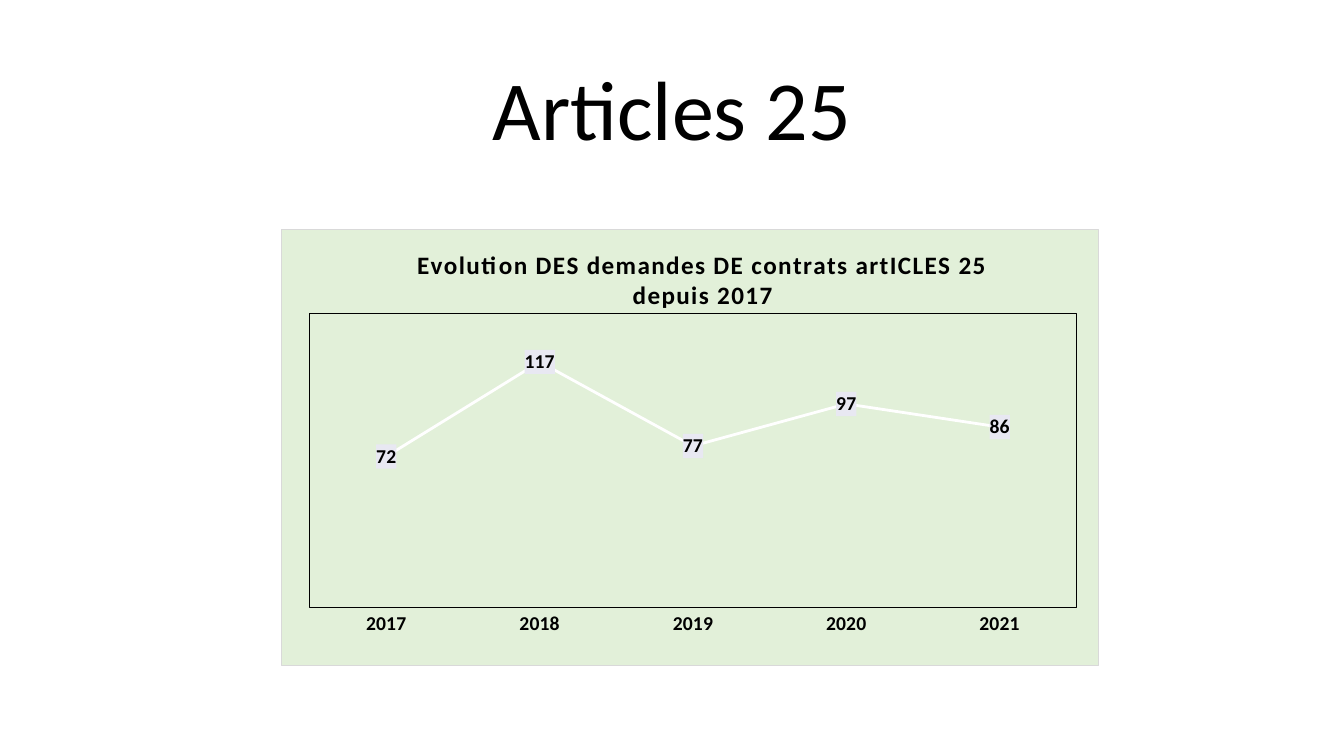
"""Build a slide with a line chart of contract requests by year."""
from lxml import etree
from pptx import Presentation
from pptx.chart.data import CategoryChartData
from pptx.dml.color import RGBColor
from pptx.enum.chart import XL_CHART_TYPE, XL_LABEL_POSITION, XL_MARKER_STYLE, XL_TICK_MARK
from pptx.enum.text import MSO_ANCHOR, PP_ALIGN
from pptx.oxml import parse_xml
from pptx.util import Pt

LINE = XL_CHART_TYPE.LINE
MID = XL_LABEL_POSITION.CENTER
NO_MARK = XL_MARKER_STYLE.NONE
NO_TICK = XL_TICK_MARK.NONE
ANCHOR = MSO_ANCHOR.MIDDLE
CENTER = PP_ALIGN.CENTER

TITLE = "Articles 25"
HEAD = "Evolution DES demandes DE contrats artICLES 25 depuis 2017"
DATA = {"2017": 72, "2018": 117, "2019": 77, "2020": 97, "2021": 86}
SIZE = (960, 540)
TITLE_BOX = (66, 28.75, 828, 104.4)
CHART_BOX = (201, 163.5, 584, 312.5)
PLOT = {"x": 0.034, "y": 0.193, "w": 0.939, "h": 0.674}
HEAD_AT = {"x": 0.16, "y": 0.03}
GREEN, GREY, BLACK, WHITE, LILAC = "E2F0D9", "D9D9D9", "000000", "FFFFFF", "E8E8F2"
FONT = {"name": "Calibri", "bold": True}
NS = ('xmlns:c="http://schemas.openxmlformats.org/drawingml/2006/chart" '
      'xmlns:a="http://schemas.openxmlformats.org/drawingml/2006/main"')
C = "{http://schemas.openxmlformats.org/drawingml/2006/chart}"


def color(code):
    return RGBColor.from_string(code)


def style(font, size, **more):
    for key, val in {**FONT, "size": Pt(size), **more}.items():
        setattr(font, key, val)
    font.color.rgb = color(BLACK)


def place(shape, box):
    for key, val in zip(("left", "top", "width", "height"), box):
        setattr(shape, key, Pt(val))


def fill(code, edge=None):
    paint = '<a:solidFill><a:srgbClr val="{}"/></a:solidFill>'
    line = f'<a:ln w="{Pt(0.75)}">{paint.format(edge)}</a:ln>' if edge else ""
    return parse_xml(f"<c:spPr {NS}>{paint.format(code)}{line}</c:spPr>")


def layout(node, spots, index, inner=False):
    for old in node.findall(C + "layout"):
        node.remove(old)
    new = parse_xml(f"<c:layout {NS}><c:manualLayout/></c:layout>")
    tags = [("layoutTarget", "inner")] if inner else []
    tags += [(key + "Mode", "edge") for key in "xy"]
    tags += list(spots.items())
    for tag, val in tags:
        etree.SubElement(new[0], C + tag, val=str(val))
    node.insert(index, new)


def add_title(slide):
    title = slide.shapes.title
    place(title, TITLE_BOX)
    frame = title.text_frame
    frame.text = TITLE
    frame.vertical_anchor = ANCHOR
    para = frame.paragraphs[0]
    para.alignment = CENTER
    para.line_spacing = 0.9
    style(para.runs[0].font, 60, bold=False)


def add_chart(slide):
    data = CategoryChartData()
    data.categories = list(DATA)
    data.add_series("Series 1", list(DATA.values()))
    chart = slide.shapes.add_chart(LINE, *map(Pt, CHART_BOX), data).chart
    style(chart.font, 10, bold=False)
    chart.has_legend = False

    chart.has_title = True
    head = chart.chart_title
    head.text_frame.text = HEAD
    run = head.text_frame.paragraphs[0].runs[0]
    style(run.font, 18)
    run.font._element.set("spc", "100")
    layout(head._element, HEAD_AT, 1)

    axis = chart.category_axis
    axis.major_tick_mark = NO_TICK
    axis.format.line.fill.background()
    style(axis.tick_labels.font, 14)
    scale = chart.value_axis
    limits = {"visible": False, "has_major_gridlines": False,
              "minimum_scale": 0, "maximum_scale": 140}
    for key, val in limits.items():
        setattr(scale, key, val)

    row = chart.plots[0].series[0]
    row.smooth = False
    row.marker.style = NO_MARK
    row.format.line.color.rgb = color(WHITE)
    row.format.line.width = Pt(2)
    tags = row.data_labels
    tags.show_value = True
    tags.position = MID
    style(tags.font, 14)
    tags._element.find(C + "txPr").addprevious(fill(LILAC))

    body = chart._chartSpace.find(C + "chart")
    body.addnext(fill(GREEN, GREY))
    area = body.find(C + "plotArea")
    layout(area, PLOT, 0, inner=True)
    area.append(fill(GREEN, BLACK))


def main():
    deck = Presentation()
    deck.slide_width, deck.slide_height = map(Pt, SIZE)
    slide = deck.slides.add_slide(deck.slide_layouts[5])
    add_title(slide)
    add_chart(slide)
    deck.save("out.pptx")


if __name__ == "__main__":
    main()
